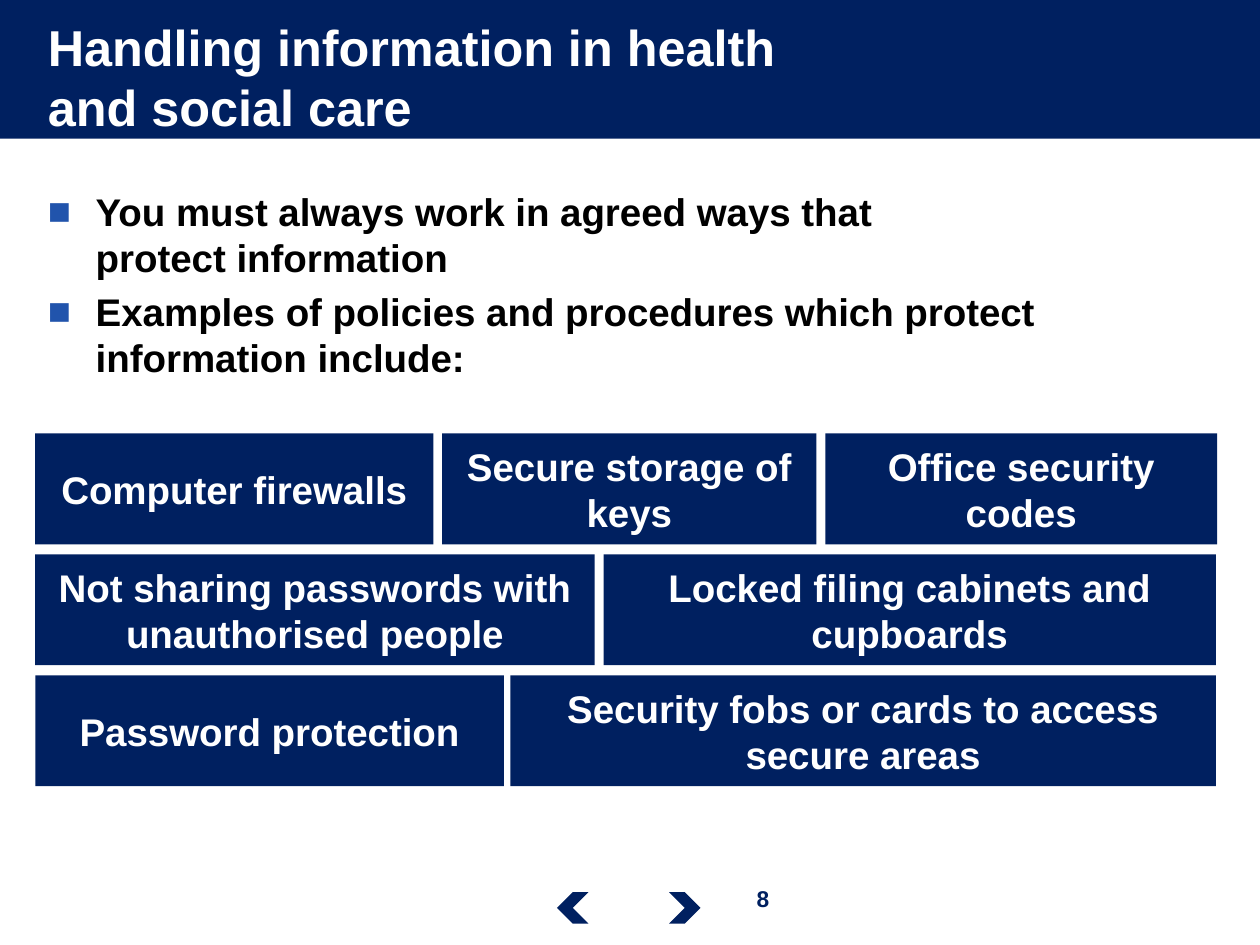
from lxml import etree
from pptx import Presentation
from pptx.dml.color import RGBColor
from pptx.enum.shapes import MSO_SHAPE as Shape
from pptx.enum.text import MSO_ANCHOR as Anchor, MSO_AUTO_SIZE as AutoSize, PP_ALIGN as Align
from pptx.oxml.ns import qn
from pptx.util import Inches, Pt

COLORS = {"navy": "002060", "bullet": "2154AC", "white": "FFFFFF", "black": "000000"}


def write(frame, *lines, size=22, color="white", align=Align.CENTER,
          anchor=Anchor.MIDDLE, bullet=None, gap=0):
    """Fill a text frame, one paragraph per line, in bold Arial."""
    frame.word_wrap = True
    frame.auto_size = AutoSize.NONE
    frame.vertical_anchor = anchor
    for index, line in enumerate(lines):
        paragraph = frame.paragraphs[0] if index == 0 else frame.add_paragraph()
        paragraph.text = line
        paragraph.alignment = align
        paragraph.space_before = Pt(gap if index else 0)
        if bullet:
            props = paragraph._p.get_or_add_pPr()
            props.set("marL", str(Inches(0.38)))
            props.set("indent", str(-Inches(0.38)))
            bullet_color = etree.SubElement(props, qn("a:buClr"))
            etree.SubElement(bullet_color, qn("a:srgbClr"), val=COLORS["bullet"])
            etree.SubElement(props, qn("a:buFont"), typeface="Arial")
            etree.SubElement(props, qn("a:buChar"), char=bullet)
        font = paragraph.font
        font.name, font.size, font.bold = "Arial", Pt(size), True
        font.color.rgb = RGBColor.from_string(COLORS[color])


def add_navy_shape(kind, left, top, width, height):
    shape = slide.shapes.add_shape(kind, Inches(left), Inches(top), Inches(width), Inches(height))
    shape.shadow.inherit = False
    shape.fill.solid()
    shape.fill.fore_color.rgb = RGBColor.from_string(COLORS["navy"])
    shape.line.fill.background()
    return shape


prs = Presentation()
prs.slide_width, prs.slide_height = Inches(10), Inches(7.5)
slide = prs.slides.add_slide(prs.slide_layouts[1])

# The banner goes behind the title placeholder
banner = add_navy_shape(Shape.RECTANGLE, -0.02, 0, 10.02, 1.1)
slide.shapes._spTree.insert(2, banner._element)

title = slide.shapes.title
title.left, title.top, title.width, title.height = map(Inches, (0.28, 0.1, 9.46, 1.01))
write(title.text_frame, "Handling information in health\vand social care",
      size=28.8, align=Align.LEFT)

body = slide.placeholders[1]
body.left, body.top, body.width, body.height = map(Inches, (0.28, 1.44, 9.38, 4.95))
write(body.text_frame,
      "You must always work in agreed ways that\vprotect information",
      "Examples of policies and procedures which protect information include:",
      color="black", align=Align.LEFT, anchor=Anchor.TOP, bullet="■", gap=4.4)

# Rows of policy boxes: left, width, wording
policy_rows = [
    [(0.28, 3.16, "Computer firewalls"),
     (3.51, 2.97, "Secure storage of keys"),
     (6.55, 3.11, "Office security codes")],
    [(0.28, 4.44, "Not sharing passwords with unauthorised people"),
     (4.79, 4.86, "Locked filing cabinets and cupboards")],
    [(0.28, 3.72, "Password protection"),
     (4.05, 5.6, "Security fobs or cards to access secure areas")],
]
for row, policies in enumerate(policy_rows):
    for left, width, policy in policies:
        policy_box = add_navy_shape(Shape.RECTANGLE, left, 3.44 + 0.96 * row, width, 0.88)
        write(policy_box.text_frame, policy)

# Navigation arrows and page number
for left, rotation in ((4.42, 180), (5.31, 0)):
    add_navy_shape(Shape.CHEVRON, left, 7.08, 0.25, 0.25).rotation = rotation

page_number = slide.shapes.add_textbox(Inches(5.7), Inches(6.97), Inches(0.71), Inches(0.32))
write(page_number.text_frame, "8", size=13, color="navy", anchor=Anchor.TOP)

prs.save("out.pptx")
